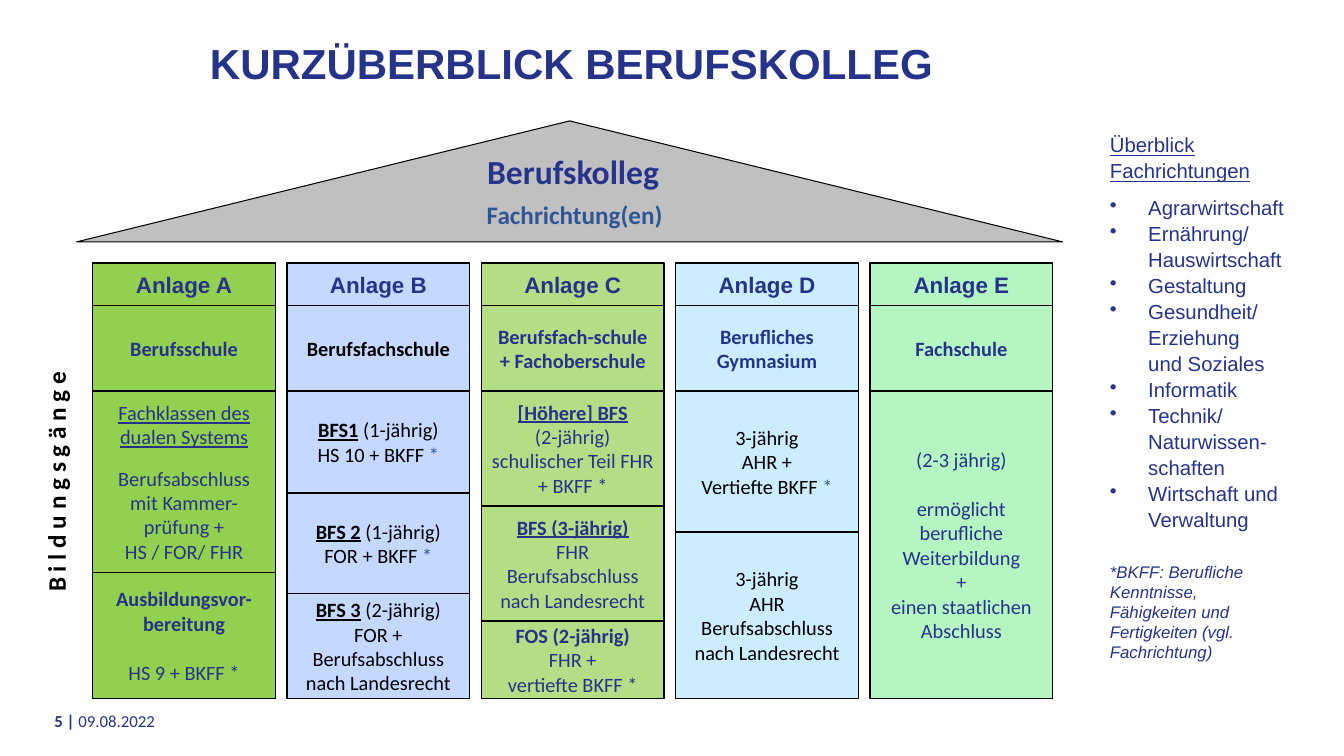
import pptx
import pptx.dml.color
import pptx.enum.shapes
import pptx.enum.text
import pptx.oxml.xmlchemy
import pptx.util

Inches, Pt = pptx.util.Inches, pptx.util.Pt
SHAPE = pptx.enum.shapes.MSO_SHAPE
ALIGN = pptx.enum.text.PP_ALIGN
ANCHOR = pptx.enum.text.MSO_ANCHOR

COLORS = {
    "navy": "26338A", "footer": "27338B", "blue": "2F5597", "black": "000000",
    "roof": "C0C0C0", "A": "92D050", "B": "C5D8FF", "C": "B4DE86",
    "D": "CCECFF", "E": "B5F5C1",
}
BOLD = {"bold": True}
UNDER = {"underline": True}
HEAD = {"bold": True, "underline": True}
GAP = {"before": 17.7}
STAR = (" *", {"color": "blue"})

# Each column: letter, text colour, school type, then (bottom edge, lines).
# A line is a string or a list of strings and (text, format) runs.
COLUMNS = [
    ("A", "navy", ["Berufsschule"], [
        (5.68, [[("Fachklassen des dualen Systems", {**UNDER, "after": 12})],
                "Berufsabschluss mit Kammer-prüfung +", "HS / FOR/ FHR"]),
        (6.93, [[("Ausbildungsvor-bereitung", BOLD)], [("HS 9 + BKFF *", GAP)]]),
    ]),
    ("B", "black", ["Berufsfachschule"], [
        (4.89, [[("BFS1", HEAD), " (1-jährig)"], ["HS 10 + BKFF", STAR]]),
        (5.89, [[("BFS 2", HEAD), " (1-jährig)"], ["FOR + BKFF", STAR]]),
        (6.93, [[("BFS 3", HEAD), " (2-jährig)"], "FOR +",
                "Berufsabschluss nach Landesrecht"]),
    ]),
    ("C", "navy", ["Berufsfach-schule + Fachoberschule"], [
        (5.02, [[("[Höhere] BFS", HEAD)], "(2-jährig)",
                "schulischer Teil FHR + BKFF *"]),
        (6.16, [[("BFS (3-jährig)", HEAD)], "FHR",
                "Berufsabschluss nach Landesrecht"]),
        (6.93, [[("FOS (2-jährig)", BOLD)], "FHR +", "vertiefte BKFF *"]),
    ]),
    ("D", "navy", ["Berufliches", "Gymnasium"], [
        (5.28, ["3-jährig", "AHR +", ["Vertiefte BKFF", STAR]]),
        (6.93, ["3-jährig", "AHR", "Berufsabschluss nach Landesrecht"]),
    ]),
    ("E", "navy", ["Fachschule"], [
        (6.93, ["(2-3 jährig)",
                [("ermöglicht berufliche Weiterbildung", GAP)], "+",
                "einen staatlichen Abschluss"]),
    ]),
]
CELL_INK = {"D": "black"}

SUBJECTS = ["Agrarwirtschaft", "Ernährung/ Hauswirtschaft", "Gestaltung",
            "Gesundheit/ Erziehung\nund Soziales", "Informatik",
            "Technik/ Naturwissen-schaften", "Wirtschaft und Verwaltung"]


def rgb(name):
    return pptx.dml.color.RGBColor.from_string(COLORS[name])


def add_bullet(p, indent):
    pPr = p._p.get_or_add_pPr()
    pPr.set("marL", str(Inches(indent)))
    pPr.set("indent", str(-Inches(indent)))
    bullet = pptx.oxml.xmlchemy.OxmlElement("a:buChar")
    bullet.set("char", "•")
    pPr.append(bullet)


def write(tf, text, new=True, size=14.5, font="Calibri", color="navy",
          bold=False, italic=False, underline=False, align=ALIGN.CENTER,
          before=None, after=None, spacing=None, bullet=None):
    """Write text as a new paragraph, or as one more run of the last one."""
    p = tf.paragraphs[-1]
    if new:
        if p.runs:
            p = tf.add_paragraph()
        if bullet:
            add_bullet(p, bullet)
        p.alignment = align
        if before:
            p.space_before = Pt(before)
        if after:
            p.space_after = Pt(after)
        if spacing:
            p.line_spacing = spacing
    for i, part in enumerate(text.split("\n")):
        if i:
            p.add_line_break()
        r = p.add_run()
        r.text = part
        r.font.size, r.font.name = Pt(size), font
        r.font.bold, r.font.italic, r.font.underline = bold, italic, underline
        r.font.color.rgb = rgb(color)


class SlideBuilder:
    def __init__(self, prs):
        self.s = prs.slides.add_slide(prs.slide_layouts[6])

    def shape(self, kind, x, y, w, h, fill, line=1):
        sp = self.s.shapes.add_shape(kind, *map(Inches, (x, y, w, h)))
        sp.shadow.inherit = False
        sp.fill.solid()
        sp.fill.fore_color.rgb = rgb(fill)
        sp.line.color.rgb = rgb("black")
        sp.line.width = Pt(line)
        return sp

    def cell(self, x, y, w, h, fill, lines, **fmt):
        tf = self.shape(SHAPE.RECTANGLE, x, y, w, h, fill).text_frame
        tf.word_wrap = True
        tf.vertical_anchor = ANCHOR.MIDDLE
        for line in lines:
            runs = [line] if isinstance(line, str) else line
            for i, run in enumerate(runs):
                text, own = (run, {}) if isinstance(run, str) else run
                write(tf, text, new=i == 0, **{**fmt, **own})

    def textbox(self, x, y, w, h, wrap=True, rotation=0, anchor=ANCHOR.TOP):
        sp = self.s.shapes.add_textbox(*map(Inches, (x, y, w, h)))
        sp.rotation = rotation
        tf = sp.text_frame
        tf.word_wrap = wrap
        tf.vertical_anchor = anchor
        return tf

    def label(self, x, y, w, h, text, wrap=True, rotation=0, **fmt):
        write(self.textbox(x, y, w, h, wrap, rotation), text, **fmt)


def add_columns(b):
    left, width, step = 0.92, 1.81, (8.63 - 0.92) / 4
    header_top, school_top, cells_top = 2.61, 3.03, 3.88
    for i, (letter, ink, school, cells) in enumerate(COLUMNS):
        x = left + i * step
        b.cell(x, header_top, width, school_top - header_top, letter,
               [f"Anlage {letter}"], size=16, font="Arial", bold=True)
        b.cell(x, school_top, width, cells_top - school_top, letter, school,
               color=ink, bold=True)
        top = cells_top
        for bottom, lines in cells:
            b.cell(x, top, width, bottom - top, letter, lines,
                   color=CELL_INK.get(letter, ink))
            top = bottom


def add_subjects(b):
    fmt = {"font": "Arial", "align": ALIGN.LEFT, "spacing": 1.07}
    tf = b.textbox(10.91, 1.25, 2.41, 4.13)
    write(tf, "Überblick Fachrichtungen", underline=True, after=7.5, **fmt)
    for subject in SUBJECTS:
        write(tf, subject, bullet=0.38, **fmt)
    b.label(10.91, 5.52, 1.89, 1.11,
            "*BKFF: Berufliche Kenntnisse, Fähigkeiten und Fertigkeiten "
            "(vgl. Fachrichtung)",
            size=12, font="Arial", italic=True, align=ALIGN.LEFT)


def main():
    prs = pptx.Presentation()
    prs.slide_width, prs.slide_height = Inches(13.33), Inches(7.5)
    b = SlideBuilder(prs)
    b.label(0.03, 0.32, 11.28, 0.61, "KURZÜBERBLICK BERUFSKOLLEG",
            size=30, font="Arial", bold=True)
    b.shape(SHAPE.FLOWCHART_EXTRACT, 0.76, 1.2, 9.78, 1.2, "roof", line=0.75)
    b.label(4.43, 1.45, 2.51, 0.5, "Berufskolleg", size=24, bold=True)
    b.label(4.72, 1.93, 1.96, 0.4, "Fachrichtung(en)", wrap=False,
            size=18, color="blue", bold=True)
    b.label(-0.65, 4.58, 2.41, 0.4, "B i l d u n g s g ä n g e", wrap=False,
            rotation=270, size=18, color="black", bold=True)
    add_columns(b)
    add_subjects(b)
    footer = b.textbox(0.44, 6.95, 1.81, 0.4, anchor=ANCHOR.MIDDLE)
    write(footer, "5 | ", size=12, color="footer", bold=True, align=ALIGN.LEFT)
    write(footer, "09.08.2022", new=False, size=12, color="footer")
    prs.save("out.pptx")


if __name__ == "__main__":
    main()
